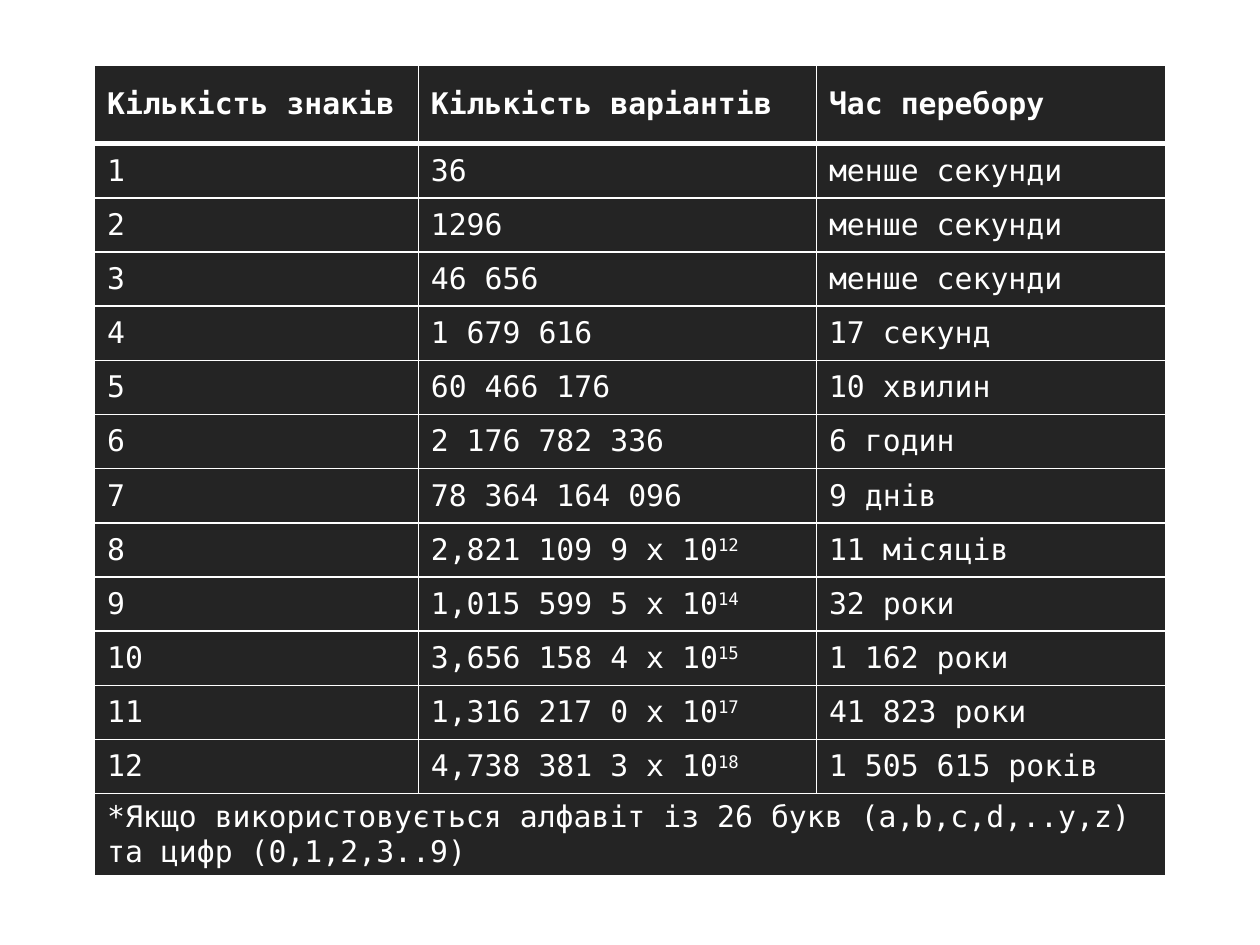
from dataclasses import dataclass

from lxml.etree import SubElement
from pptx import Presentation
from pptx.dml.color import RGBColor
from pptx.enum.text import MSO_ANCHOR
from pptx.oxml.ns import qn
from pptx.util import Inches, Pt


@dataclass(frozen=True)
class Theme:
    font: str = "DejaVu Sans Mono"
    size: int = 17
    text: str = "FFFFFF"
    line: str = "FFFFFF"
    cell: str = "0D0D0D"
    cell_opacity: int = 90
    thin: int = 1
    thick: int = 3


HEADER = ["Кількість знаків", "Кількість варіантів", "Час перебору"]

# Variants and search time for passwords of 1, 2, 3... characters; ^ starts a superscript
RESULTS = [
    ("36", "менше секунди"),
    ("1296", "менше секунди"),
    ("46 656", "менше секунди"),
    ("1 679 616", "17 секунд"),
    ("60 466 176", "10 хвилин"),
    ("2 176 782 336", "6 годин"),
    ("78 364 164 096", "9 днів"),
    ("2,821 109 9 x 10^12", "11 місяців"),
    ("1,015 599 5 x 10^14", "32 роки"),
    ("3,656 158 4 x 10^15", "1 162 роки"),
    ("1,316 217 0 x 10^17", "41 823 роки"),
    ("4,738 381 3 x 10^18", "1 505 615 років"),
]

FOOTNOTE = "*Якщо використовується алфавіт із 26 букв (a,b,c,d,..y,z) та цифр (0,1,2,3..9)"


class SlideBuilder:
    def __init__(self, slide, theme):
        self.s = slide
        self.theme = theme

    def table(self, rows, left, top, widths, heights):
        frame = self.s.shapes.add_table(
            len(rows), len(widths), Inches(left), Inches(top),
            Inches(sum(widths)), Inches(sum(heights)))
        table = frame.table
        table.horz_banding = False
        for column, width in zip(table.columns, widths):
            column.width = Inches(width)
        for row, height in zip(table.rows, heights):
            row.height = Inches(height)
        for i, texts in enumerate(rows):
            for j in range(len(widths)):
                cell = table.cell(i, j)
                self.borders(cell, i)
                self.fill(cell)
                if j < len(texts):
                    self.cell_text(cell, texts[j], bold=i == 0)
            # A short row spans the whole table
            if len(texts) == 1:
                table.cell(i, 0).merge(table.cell(i, len(widths) - 1))
        return table

    def borders(self, cell, row):
        th = self.theme
        widths = {
            "a:lnL": th.thin,
            "a:lnR": th.thin,
            "a:lnT": th.thick if row == 1 else th.thin,
            "a:lnB": th.thick if row == 0 else th.thin,
        }
        tcPr = cell._tc.get_or_add_tcPr()
        for tag, width in widths.items():
            ln = SubElement(tcPr, qn(tag), w=str(Pt(width)))
            solid = SubElement(ln, qn("a:solidFill"))
            SubElement(solid, qn("a:srgbClr"), val=th.line)

    def fill(self, cell):
        cell.fill.solid()
        cell.fill.fore_color.rgb = RGBColor.from_string(self.theme.cell)
        color = cell._tc.tcPr.find(qn("a:solidFill")).find(qn("a:srgbClr"))
        SubElement(color, qn("a:alpha"), val=str(self.theme.cell_opacity * 1000))

    def cell_text(self, cell, text, bold):
        cell.vertical_anchor = MSO_ANCHOR.MIDDLE
        p = cell.text_frame.paragraphs[0]
        for k, part in enumerate(text.split("^")):
            r = p.add_run()
            r.text = part
            r.font.name = self.theme.font
            r.font.size = Pt(self.theme.size)
            r.font.bold = bold
            r.font.color.rgb = RGBColor.from_string(self.theme.text)
            if k:
                r._r.get_or_add_rPr().set("baseline", "30000")


def main():
    prs = Presentation()
    prs.slide_width, prs.slide_height = Inches(10), Inches(7.5)
    s = prs.slides.add_slide(prs.slide_layouts[6])
    builder = SlideBuilder(s, Theme())

    # Header, one row per password length, footnote
    body = [(str(n), *result) for n, result in enumerate(RESULTS, start=1)]
    rows = [HEADER, *body, [FOOTNOTE]]
    builder.table(rows, 0.75, 0.52, widths=[2.57, 3.16, 2.77],
                  heights=[0.62] + [0.43] * (len(rows) - 1))

    prs.save("out.pptx")


if __name__ == "__main__":
    main()
